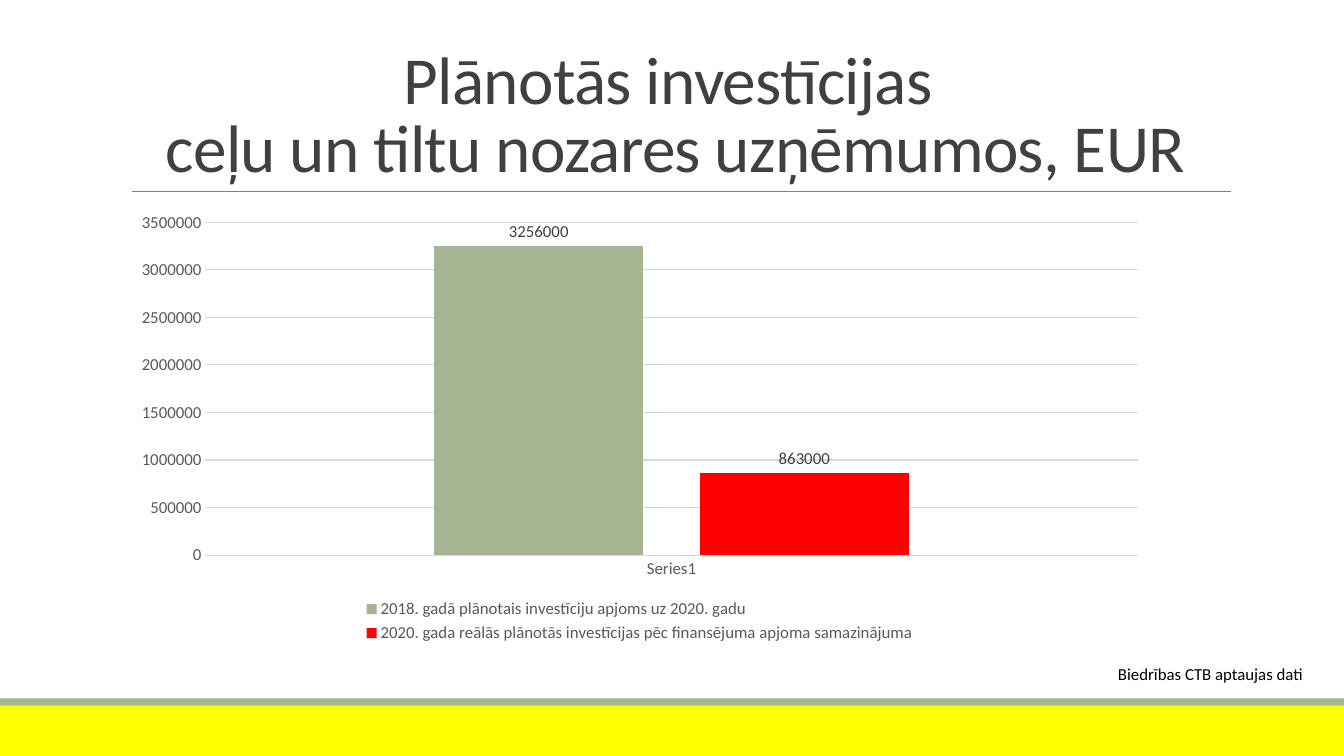
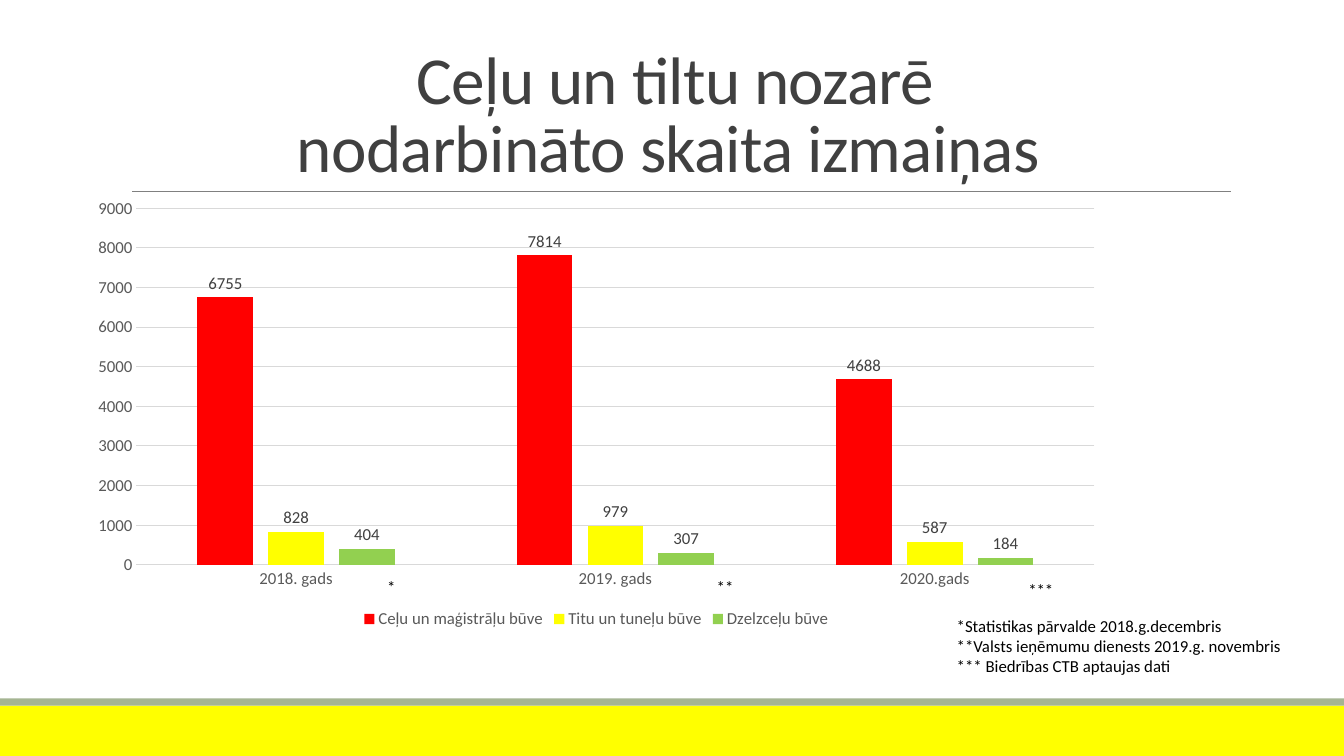
import pptx
import pptx.chart.data
import pptx.dml.color
import pptx.enum.chart
import pptx.enum.shapes
import pptx.enum.text
import pptx.oxml.ns
import pptx.util
from lxml import etree

Inches = pptx.util.Inches
Pt = pptx.util.Pt
RGBColor = pptx.dml.color.RGBColor

YELLOW = RGBColor(0xFF, 0xFF, 0x00)
SAGE = RGBColor(0xA5, 0xB5, 0x92)
RED = RGBColor(0xFF, 0x00, 0x00)
GREEN = RGBColor(0x92, 0xD0, 0x50)
BLACK = RGBColor(0x00, 0x00, 0x00)
DARK = RGBColor(0x40, 0x40, 0x40)
GREY = RGBColor(0x59, 0x59, 0x59)
RULE = RGBColor(0x80, 0x80, 0x80)
GRID = RGBColor(0xD9, 0xD9, 0xD9)
FONT = "Calibri"
WIDTH, HEIGHT = 13.33, 7.5


class Deck:
    """Hold the shared style and the slide being built."""

    def __init__(self):
        self.prs = pptx.Presentation()
        self.prs.slide_width = Inches(WIDTH)
        self.prs.slide_height = Inches(HEIGHT)
        self.s = None

    def style(self, font, size, color):
        font.name = FONT
        font.size = Pt(size)
        font.color.rgb = color

    def slide(self, title_lines):
        self.s = self.prs.slides.add_slide(self.prs.slide_layouts[6])
        self.band(7, 0.5, YELLOW)
        self.band(6.93, 0.07, SAGE)
        self.rule(1.31, 12.21, 1.9)
        self.title(title_lines)

    def band(self, top, height, color):
        sp = self.s.shapes.add_shape(
            pptx.enum.shapes.MSO_SHAPE.RECTANGLE,
            Inches(0), Inches(top), Inches(WIDTH), Inches(height))
        sp.shadow.inherit = False
        sp.fill.solid()
        sp.fill.fore_color.rgb = color
        sp.line.fill.background()

    def rule(self, left, right, y):
        line = self.s.shapes.add_connector(
            pptx.enum.shapes.MSO_CONNECTOR.STRAIGHT,
            Inches(left), Inches(y), Inches(right), Inches(y))
        line.line.color.rgb = RULE
        line.line.width = Pt(0.5)
        etree.SubElement(line._element.spPr, pptx.oxml.ns.qn("a:effectLst"))

    def box(self, left, top, width, height, wrap=True):
        sp = self.s.shapes.add_textbox(
            Inches(left), Inches(top), Inches(width), Inches(height))
        tf = sp.text_frame
        tf.word_wrap = wrap
        return tf

    def run(self, p, text, size, color):
        r = p.add_run()
        r.text = text
        self.style(r.font, size, color)
        return r

    def title(self, lines):
        tf = self.box(1.2, 0.31, 11, 1.59)
        tf.vertical_anchor = pptx.enum.text.MSO_ANCHOR.BOTTOM
        p = tf.paragraphs[0]
        p.alignment = pptx.enum.text.PP_ALIGN.CENTER
        p.line_spacing = 0.85
        for i, line in enumerate(lines):
            if i:
                p.add_line_break()
            r = self.run(p, line, 48, DARK)
            r.font._element.set("spc", "-50")

    def note(self, left, top, width, height, lines, wrap=True):
        tf = self.box(left, top, width, height, wrap)
        tf.auto_size = pptx.enum.text.MSO_AUTO_SIZE.SHAPE_TO_FIT_TEXT
        for i, line in enumerate(lines):
            p = tf.add_paragraph() if i else tf.paragraphs[0]
            self.run(p, line, 12, BLACK)

    def chart(self, left, top, categories, series, maximum, step):
        data = pptx.chart.data.CategoryChartData()
        data.categories = categories
        for name, values, _ in series:
            data.add_series(name, values)
        chart = self.s.shapes.add_chart(
            pptx.enum.chart.XL_CHART_TYPE.COLUMN_CLUSTERED,
            Inches(left), Inches(top), Inches(10.29), Inches(4.4), data).chart
        self.style(chart.font, 10, BLACK)
        chart.has_title = False
        chart.has_legend = True
        chart.legend.position = pptx.enum.chart.XL_LEGEND_POSITION.BOTTOM
        chart.legend.include_in_layout = False
        self.style(chart.legend.font, 12, GREY)

        for axis in (chart.category_axis, chart.value_axis):
            axis.major_tick_mark = pptx.enum.chart.XL_TICK_MARK.NONE
            axis.minor_tick_mark = pptx.enum.chart.XL_TICK_MARK.NONE
            self.style(axis.tick_labels.font, 12, GREY)
        axis = chart.value_axis
        axis.minimum_scale = 0
        axis.maximum_scale = maximum
        axis.major_unit = step
        axis.format.line.fill.background()
        axis.has_major_gridlines = True
        for part in (chart.category_axis, axis.major_gridlines):
            part.format.line.color.rgb = GRID
            part.format.line.width = Pt(0.75)

        plot = chart.plots[0]
        plot.gap_width = 219
        plot.overlap = -27
        plot.vary_by_categories = False
        for bars, (_, _, color) in zip(plot.series, series):
            bars.format.fill.solid()
            bars.format.fill.fore_color.rgb = color
            labels = bars.data_labels
            labels.show_value = True
            labels.position = pptx.enum.chart.XL_LABEL_POSITION.OUTSIDE_END
            self.style(labels.font, 12, DARK)


def main():
    deck = Deck()

    deck.slide(["Plānotās investīcijas ", "ceļu un tiltu nozares uzņēmumos, EUR"])
    deck.chart(1.2, 2.02, ["Series1"], [
        ("2018. gadā plānotais investīciju apjoms uz 2020. gadu",
         [3256000], SAGE),
        ("2020. gada reālās plānotās investīcijas pēc finansējuma apjoma samazinājuma",
         [863000], RED),
    ], 3500000, 500000)
    deck.note(10.99, 6.54, 2.04, 0.3, ["Biedrības CTB aptaujas dati"], wrap=False)

    deck.slide(["Ceļu un tiltu nozarē", "nodarbināto skaita izmaiņas "])
    deck.chart(0.77, 1.88, ["2018. gads", "2019. gads", "2020.gads"], [
        ("Ceļu un maģistrāļu būve", [6755, 7814, 4688], RED),
        ("Titu un tuneļu būve", [828, 979, 587], YELLOW),
        ("Dzelzceļu būve", [404, 307, 184], GREEN),
    ], 9000, 1000)
    deck.note(9.39, 6.06, 3.45, 0.71, [
        "*Statistikas pārvalde 2018.g.decembris",
        "**Valsts ieņēmumu dienests 2019.g. novembris",
        "*** Biedrības CTB aptaujas dati",
    ])
    for left, top, width, mark in (
            (3.74, 5.67, 0.32, "*"),
            (7.01, 5.67, 0.59, "**"),
            (10.1, 5.7, 0.59, "***")):
        deck.note(left, top, width, 0.3, [mark])

    deck.prs.save("out.pptx")


if __name__ == "__main__":
    main()
